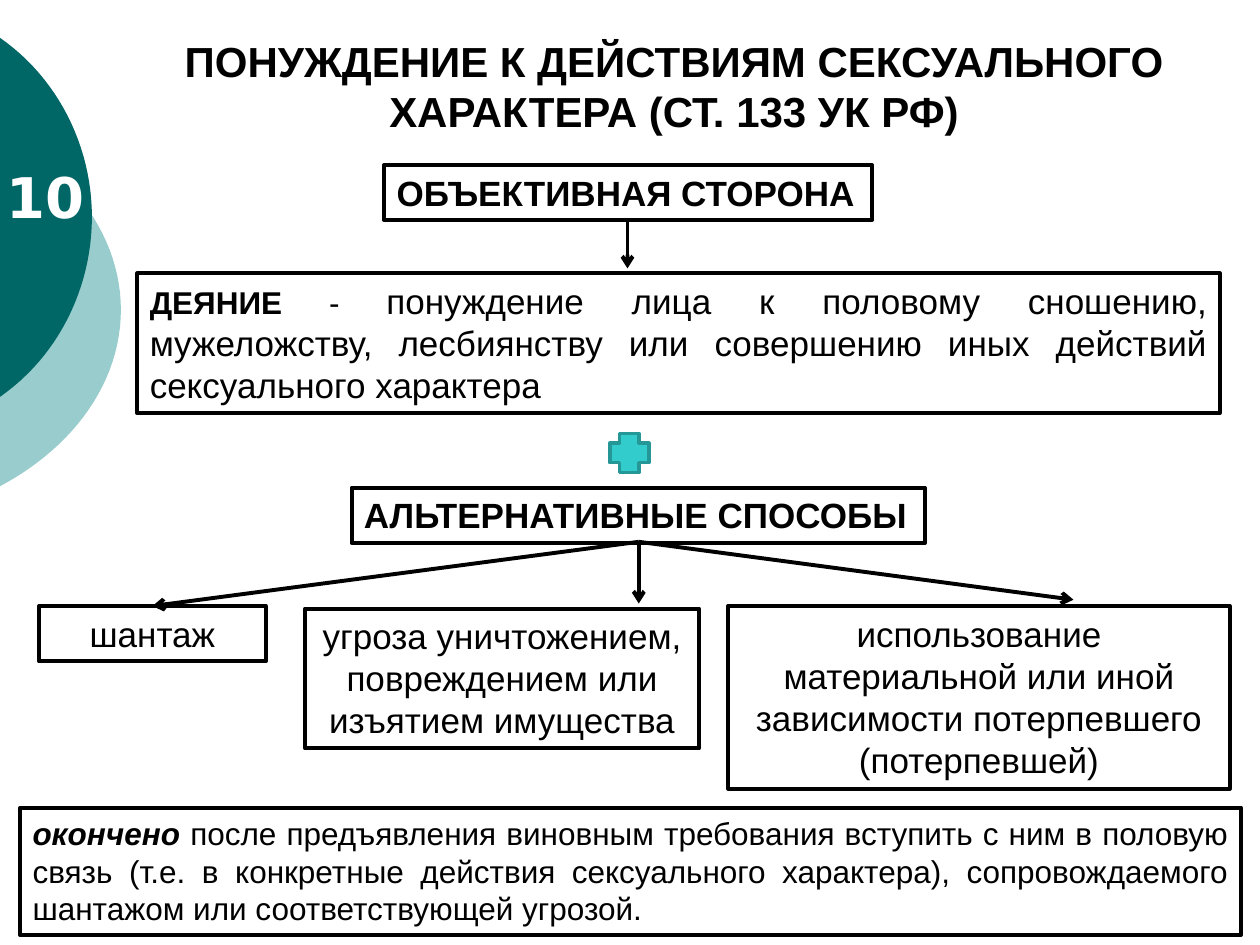
from lxml.etree import SubElement
from pptx import Presentation
from pptx.dml.color import RGBColor
from pptx.enum.shapes import MSO_CONNECTOR, MSO_SHAPE
from pptx.enum.text import MSO_ANCHOR, PP_ALIGN
from pptx.oxml.ns import qn
from pptx.util import Inches, Pt

BLACK, WHITE = "000000", "FFFFFF"
LEFT, CENTER, JUSTIFY = PP_ALIGN.LEFT, PP_ALIGN.CENTER, PP_ALIGN.JUSTIFY

TITLE = "ПОНУЖДЕНИЕ К ДЕЙСТВИЯМ СЕКСУАЛЬНОГО ХАРАКТЕРА (СТ. 133 УК РФ)"
TITLE_PLACE = (1.09, 0.23, 8.52, 0.91)
NUMBER_PLACE = (-0.05, 1.24, 1.11, 0.63)
PLUS_PLACE = (4.84, 3.44, 0.31, 0.31)

ARCS = [
    ("99CCCC", (0, 1.06), [((0.6, 1.38), (0.96, 1.9), (0.96, 2.46)),
                           ((0.96, 3.02), (0.6, 3.54), (0, 3.86))]),
    ("006666", (0, 0.3), [((0.46, 0.62), (0.73, 1.16), (0.73, 1.72)),
                          ((0.73, 2.29), (0.46, 2.83), (0, 3.15))]),
]

BOXES = [
    ((3.05, 1.31, 3.87, 0.44), LEFT, [[("ОБЪЕКТИВНАЯ СТОРОНА", 20, "b")]]),
    ((1.09, 2.17, 8.59, 1.11), JUSTIFY, [[
        ("ДЕЯНИЕ", 18, "b"), (" - ", 18, ""),
        ("понуждение лица к половому сношению, мужеложству, лесбиянству или "
         "совершению иных действий сексуального характера", 20, "")]]),
    ((2.79, 3.87, 4.55, 0.44), LEFT, [[("АЛЬТЕРНАТИВНЫЕ СПОСОБЫ", 20, "b")]]),
    ((0.31, 4.81, 1.8, 0.44), CENTER, [[("шантаж", 20, "")]]),
    ((2.42, 4.83, 3.13, 1.11), CENTER, [[
        ("угроза уничтожением, повреждением или изъятием имущества", 20, "")]]),
    ((5.78, 4.81, 3.98, 1.45), CENTER, [
        [("использование материальной или иной зависимости потерпевшего", 20, "")],
        [("(потерпевшей)", 20, "")]]),
    ((0.16, 6.41, 9.69, 1.01), JUSTIFY, [[
        ("окончено ", 18, "bi"),
        ("после предъявления виновным требования вступить с ним в половую связь "
         "(т.е. в конкретные действия сексуального характера), сопровождаемого "
         "шантажом или соответствующей угрозой.", 18, "")]]),
]

WAYS_BOTTOM = (5.07, 4.3)
ARROWS = [((4.98, 1.75), (4.98, 2.13))] + [
    (WAYS_BOTTOM, tip) for tip in [(1.21, 4.81), (5.07, 4.79), (8.52, 4.76)]]


def color(value):
    return RGBColor.from_string(value)


def place(shape, spot):
    shape.left, shape.top, shape.width, shape.height = map(Inches, spot)


def write(shape, paragraphs, align, font="Arial", ink=BLACK):
    frame = shape.text_frame
    frame.word_wrap = True
    frame.vertical_anchor = MSO_ANCHOR.TOP
    frame.margin_left = frame.margin_right = Inches(0.1)
    frame.margin_top = frame.margin_bottom = Inches(0.05)
    for index, spans in enumerate(paragraphs):
        para = frame.add_paragraph() if index else frame.paragraphs[0]
        para.alignment = align
        for text, size, style in spans:
            span = para.add_run()
            span.text = text
            span.font.name = font
            span.font.size = Pt(size)
            span.font.bold = "b" in style
            span.font.italic = "i" in style
            span.font.color.rgb = color(ink)


def add_preset(page, kind, spot, fill, line, width):
    shape = page.shapes.add_shape(kind, *map(Inches, spot))
    shape.shadow.inherit = False
    if fill:
        shape.fill.solid()
        shape.fill.fore_color.rgb = color(fill)
    else:
        shape.fill.background()
    shape.line.color.rgb = color(line)
    shape.line.width = Pt(width)
    return shape


def curve_points(start, curves, steps=24):
    points = []
    for first, second, end in curves:
        for step in range(1, steps + 1):
            t = step / steps
            weights = ((1 - t) ** 3, 3 * t * (1 - t) ** 2, 3 * t * t * (1 - t), t ** 3)
            corners = (start, first, second, end)
            points.append(tuple(
                sum(weight * corner[axis] for weight, corner in zip(weights, corners))
                for axis in (0, 1)))
        start = end
    return points


def add_arc(page, fill, start, curves):
    builder = page.shapes.build_freeform(*map(Inches, start), scale=1.0)
    builder.add_line_segments(
        [(Inches(x), Inches(y)) for x, y in curve_points(start, curves)], close=True)
    arc = builder.convert_to_shape()
    arc.shadow.inherit = False
    arc.fill.solid()
    arc.fill.fore_color.rgb = color(fill)
    arc.line.fill.background()


def add_arrow(page, start, tip):
    arrow = page.shapes.add_connector(
        MSO_CONNECTOR.STRAIGHT, *map(Inches, start + tip))
    arrow.line.color.rgb = color(BLACK)
    arrow.line.width = Pt(2.25)
    SubElement(arrow.line._get_or_add_ln(), qn("a:tailEnd"), type="arrow")
    SubElement(arrow._element.spPr, qn("a:effectLst"))


def main():
    deck = Presentation()
    deck.slide_width, deck.slide_height = Inches(10), Inches(7.5)
    page = deck.slides.add_slide(deck.slide_layouts[5])

    for arc in ARCS:
        add_arc(page, *arc)

    title = page.shapes.title
    place(title, TITLE_PLACE)
    write(title, [[(TITLE, 24, "b")]], CENTER)

    number = page.shapes.add_textbox(*map(Inches, NUMBER_PLACE))
    write(number, [[("10", 32, "b")]], LEFT, "DejaVu Sans", WHITE)

    for spot, align, paragraphs in BOXES:
        box = add_preset(page, MSO_SHAPE.RECTANGLE, spot, None, BLACK, 2.25)
        write(box, paragraphs, align)

    add_preset(page, MSO_SHAPE.CROSS, PLUS_PLACE, "33CCCC", "269797", 2)

    for start, tip in ARROWS:
        add_arrow(page, start, tip)

    deck.save("out.pptx")


if __name__ == "__main__":
    main()
